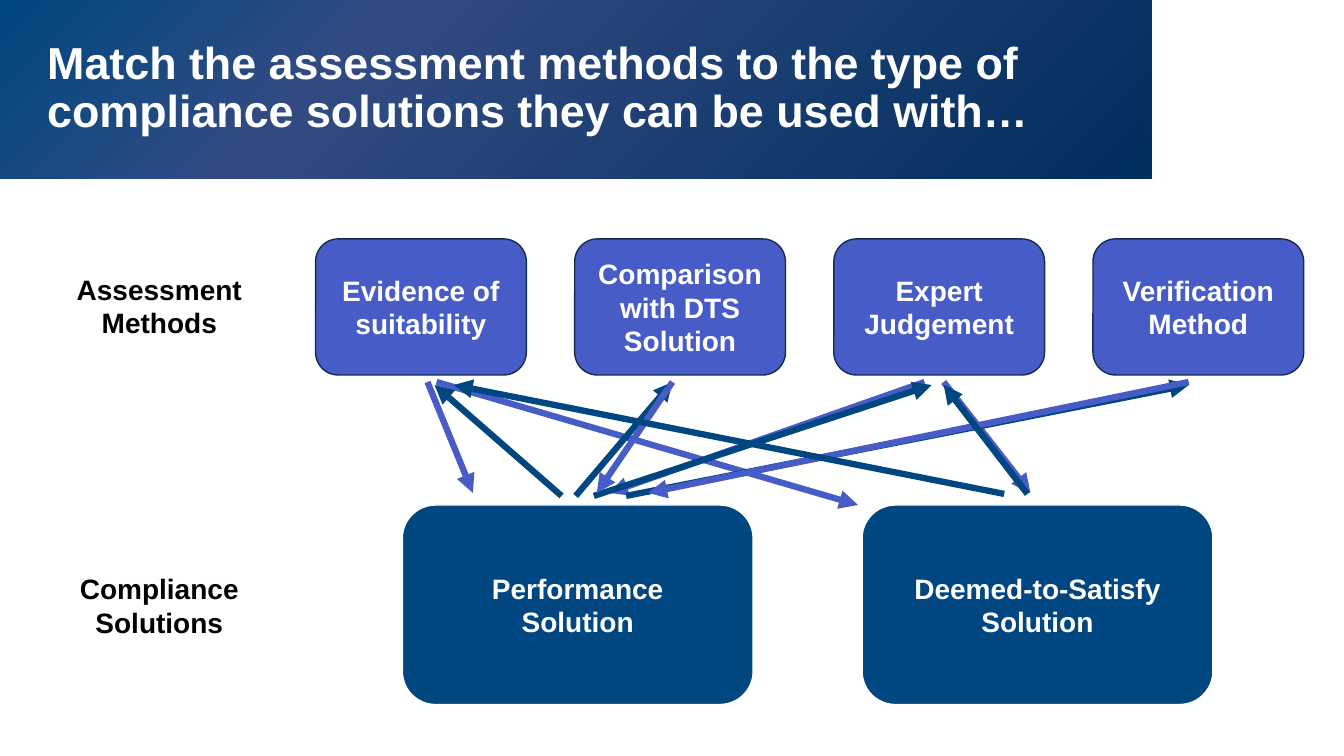
from copy import deepcopy

from lxml.etree import SubElement
from pptx import Presentation
from pptx.dml.color import RGBColor
from pptx.enum.shapes import MSO_CONNECTOR, MSO_SHAPE
from pptx.enum.text import MSO_ANCHOR, PP_ALIGN
from pptx.oxml.ns import qn
from pptx.util import Inches, Pt

BLUE, PURPLE, NAVY = "004680", "485CC7", "122C4E"
WHITE, BLACK = "FFFFFF", "000000"
BANNER_STOPS = [(0, BLUE), (0.3, "314B82"), (1, "002E5D")]

METHODS = ["Evidence of suitability", "Comparison with DTS Solution",
           "Expert Judgement", "Verification Method"]
SOLUTIONS = ["Performance\nSolution", "Deemed-to-Satisfy Solution"]
ROW_LABELS = [("Assessment Methods", 2.65), ("Compliance Solutions", 5.62)]

# Each arrow: colour, start point, end point
ARROWS = [
    (PURPLE, (4.24, 3.79), (4.69, 4.89)),
    (PURPLE, (4.33, 3.79), (8.51, 5.01)),
    (PURPLE, (9.17, 3.79), (6.04, 4.89)),
    (PURPLE, (9.36, 3.79), (10.22, 4.89)),
    (BLUE, (5.57, 4.92), (4.31, 3.82)),
    (BLUE, (5.71, 4.92), (6.67, 3.79)),
    (BLUE, (5.89, 4.92), (9.24, 3.82)),
    (BLUE, (6.21, 4.92), (11.79, 3.82)),
    (PURPLE, (6.67, 3.79), (5.92, 4.89)),
    (PURPLE, (11.79, 3.79), (6.43, 4.89)),
    (BLUE, (10.19, 4.9), (9.36, 3.82)),
    (BLUE, (9.96, 4.9), (4.5, 3.82)),
]


def colour(value):
    return RGBColor.from_string(value)


class SlideBuilder:
    """Draws elements on one page in a shared style."""

    font = "Arial"
    text_size = 20
    arrow_width = 4.5

    def __init__(self, page):
        self.page = page

    def fill_text(self, frame, text, text_colour, size, align, anchor):
        frame.word_wrap = True
        frame.vertical_anchor = anchor
        para = frame.paragraphs[0]
        para.alignment = align
        for index, line in enumerate(text.split("\n")):
            if index:
                para.add_line_break()
            span = para.add_run()
            span.text = line
            span.font.name = self.font
            span.font.size = Pt(size)
            span.font.bold = True
            span.font.color.rgb = colour(text_colour)
        return para

    def banner(self, left, top, width, height, stops):
        """Add a borderless rectangle with a diagonal three-stop gradient."""
        box = self.page.shapes.add_shape(
            MSO_SHAPE.RECTANGLE, Inches(left), Inches(top), Inches(width), Inches(height))
        box.shadow.inherit = False
        box.line.fill.background()
        box.fill.gradient()
        box.fill.gradient_angle = 315
        stop_list = box.element.spPr.find(qn("a:gradFill")).find(qn("a:gsLst"))
        stop_list.insert(1, deepcopy(stop_list[0]))
        for stop, (position, value) in zip(box.fill.gradient_stops, stops):
            stop.position = position
            stop.color.rgb = colour(value)

    def text(self, left, top, width, height, text, text_colour=BLACK, size=text_size,
             align=PP_ALIGN.CENTER, anchor=MSO_ANCHOR.TOP):
        box = self.page.shapes.add_textbox(
            Inches(left), Inches(top), Inches(width), Inches(height))
        return self.fill_text(box.text_frame, text, text_colour, size, align, anchor)

    def rounded_box(self, left, top, width, height, text, fill, border):
        box = self.page.shapes.add_shape(
            MSO_SHAPE.ROUNDED_RECTANGLE,
            Inches(left), Inches(top), Inches(width), Inches(height))
        box.shadow.inherit = False
        box.fill.solid()
        box.fill.fore_color.rgb = colour(fill)
        box.line.color.rgb = colour(border)
        box.line.width = Pt(1)
        self.fill_text(box.text_frame, text, WHITE, self.text_size,
                       PP_ALIGN.CENTER, MSO_ANCHOR.MIDDLE)

    def arrow(self, value, start, end):
        connector = self.page.shapes.add_connector(
            MSO_CONNECTOR.STRAIGHT, *(Inches(length) for length in start + end))
        connector.line.color.rgb = colour(value)
        connector.line.width = Pt(self.arrow_width)
        properties = connector.element.spPr
        SubElement(properties.find(qn("a:ln")), qn("a:tailEnd"), type="triangle")
        SubElement(properties, qn("a:effectLst"))


def main():
    deck = Presentation()
    deck.slide_width, deck.slide_height = Inches(13.33), Inches(7.5)
    builder = SlideBuilder(deck.slides.add_slide(deck.slide_layouts[6]))

    builder.banner(0, 0, 11.42, 1.77, BANNER_STOPS)
    title = builder.text(
        0.37, 0.34, 10.24, 1.07,
        "Match the assessment methods to the type of compliance solutions "
        "they can be used with…",
        WHITE, 32, PP_ALIGN.LEFT, MSO_ANCHOR.BOTTOM)
    title.line_spacing = 0.9
    title.space_after = Pt(2)

    for label, top in ROW_LABELS:
        builder.text(0.52, top, 2.12, 0.77, label)
    for value, start, end in ARROWS:
        builder.arrow(value, start, end)
    for index, solution in enumerate(SOLUTIONS):
        builder.rounded_box(3.99 + 4.56 * index, 5.01, 3.48, 1.98, solution, BLUE, WHITE)
    for index, method in enumerate(METHODS):
        builder.rounded_box(3.13 + 2.57 * index, 2.37, 2.09, 1.35, method, PURPLE, NAVY)

    deck.save("out.pptx")


if __name__ == "__main__":
    main()
